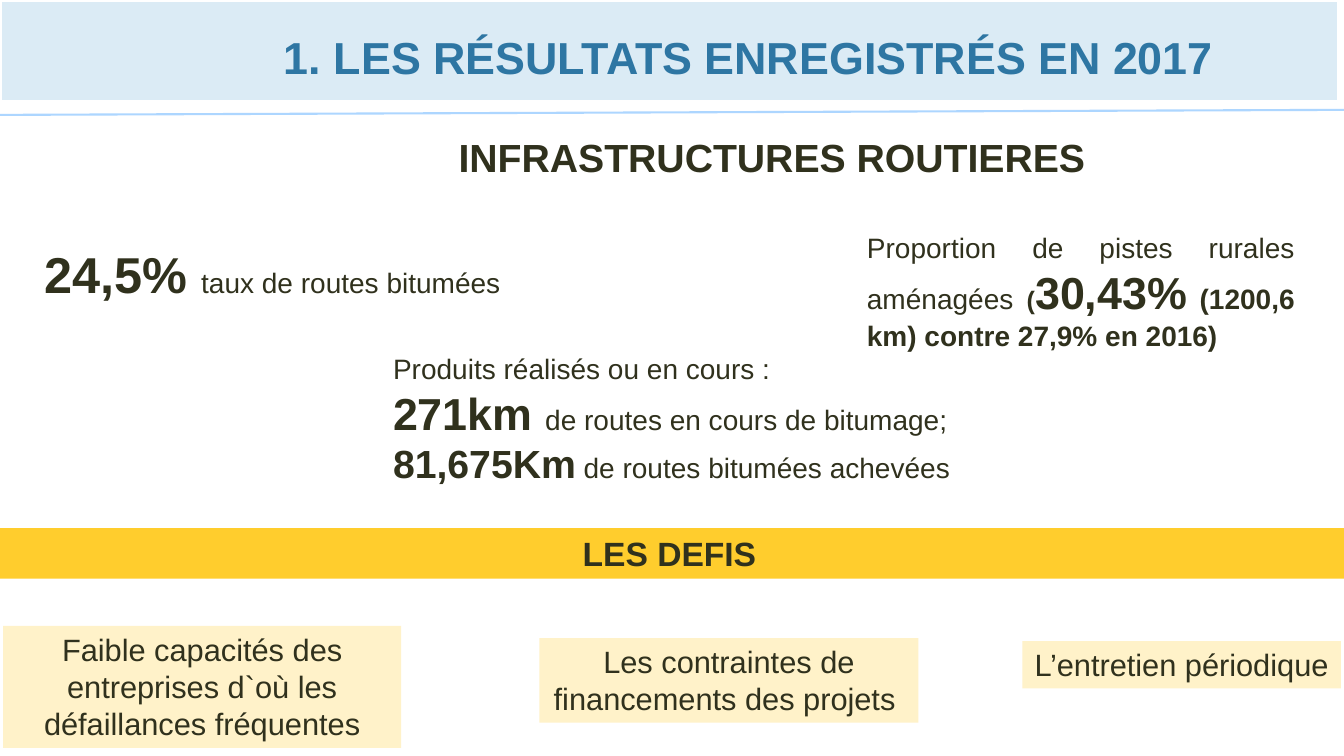
from pptx import Presentation
from pptx.dml.color import RGBColor
from pptx.enum.shapes import MSO_CONNECTOR as Link, MSO_SHAPE as Kind
from pptx.enum.text import MSO_ANCHOR as Anchor, MSO_AUTO_SIZE as Auto, PP_ALIGN as Align
from pptx.oxml.ns import qn
from pptx.util import Inches, Pt
from lxml.etree import SubElement

INK = "30311D"
BLUE = "2E76A3"
WHITE = "FFFFFF"
CREAM = "FFF2C9"
GOLD = "FFCD2D"


def tint(color, code):
    color.rgb = RGBColor.from_string(code)


def add_rect(slide, spot, fill):
    rect = slide.shapes.add_shape(Kind.RECTANGLE, *map(Inches, spot))
    rect.shadow.inherit = False
    rect.fill.solid()
    tint(rect.fill.fore_color, fill)
    rect.line.fill.background()
    return rect


def add_rule(slide, start, end, color, width):
    rule = slide.shapes.add_connector(Link.STRAIGHT, *map(Inches, start + end))
    tint(rule.line.color, color)
    rule.line.width = Pt(width)
    SubElement(rule._element.spPr, qn("a:effectLst"))


def write(box, lines, align=Align.CENTER, color=INK, wrap=True):
    frame = box.text_frame
    frame.word_wrap = wrap
    frame.auto_size = Auto.SHAPE_TO_FIT_TEXT
    frame.vertical_anchor = Anchor.TOP
    for num, line in enumerate(lines):
        para = frame.add_paragraph() if num else frame.paragraphs[0]
        para.alignment = align
        for text, size, bold in line:
            run = para.add_run()
            run.text = text
            run.font.name = "Arial"
            run.font.size = Pt(size)
            run.font.bold = bold
            tint(run.font.color, color)


def add_label(slide, spot, fill, text, size, bold=False, wrap=True):
    write(add_rect(slide, spot, fill), [[(text, size, bold)]], wrap=wrap)


def add_text(slide, spot, lines, **style):
    box = slide.shapes.add_textbox(*map(Inches, spot))
    write(box, lines, **style)
    return box


def add_title(slide):
    head = add_rect(slide, (0, 0, 13.28, 1.01), "DBEBF5")
    tint(head.line.color, WHITE)
    head.line.width = Pt(2.25)
    add_rule(slide, (0, 1.14), (13.33, 1.09), "ADD6FF", 1.5)
    title = add_text(slide, (2.54, 0.3, 9.77, 0.52),
                     [[("LES RÉSULTATS ENREGISTRÉS EN 2017", 32, True)]], color=BLUE)
    frame = title.text_frame
    frame.auto_size = Auto.NONE
    frame.vertical_anchor = Anchor.MIDDLE
    props = frame.paragraphs[0]._p.get_or_add_pPr()
    props.set("marL", str(Inches(0.5)))
    props.set("indent", str(Inches(-0.5)))
    SubElement(props, qn("a:buFont"), typeface="+mj-lt")
    SubElement(props, qn("a:buAutoNum"), type="arabicPeriod")


def add_facts(slide):
    add_label(slide, (3.94, 1.27, 7.43, 0.57), WHITE, "INFRASTRUCTURES ROUTIERES", 28, True)
    work = add_rect(slide, (3.8, 3.44, 5.86, 1.45), WHITE)
    write(work, [
        [("Produits réalisés ou en cours :", 20, False)],
        [("271km ", 32, True), ("de routes en cours de bitumage;", 20, False)],
        [("81,675Km", 28, True), (" de routes bitumées achevées", 20, False)],
    ], align=Align.JUSTIFY)
    add_text(slide, (0.34, 2.36, 4.92, 0.71), [
        [("24,5% ", 36, True), ("taux de routes bitumées", 20, False)],
    ], align=Align.JUSTIFY)
    add_text(slide, (8.5, 2.24, 4.44, 1.31), [
        [("Proportion de pistes rurales aménagées ", 20, False), ("(", 18, True),
         ("30,43%", 32, True), (" ", 18, True),
         ("(1200,6 km) contre 27,9% en 2016)", 20, True)],
    ], align=Align.JUSTIFY)


def add_needs(slide):
    add_label(slide, (-0.06, 5.24, 13.4, 0.5), GOLD, "LES DEFIS", 24, True)
    add_label(slide, (0.03, 6.21, 3.95, 1.21), CREAM,
              "Faible capacités des entreprises d`où les défaillances fréquentes", 22)
    add_label(slide, (5.35, 6.33, 3.76, 0.84), CREAM,
              "Les contraintes de financements des projets ", 22)
    add_label(slide, (10.14, 6.36, 3.16, 0.47), CREAM,
              "L’entretien périodique", 22, wrap=False)


def main():
    deck = Presentation()
    deck.slide_width = Inches(13.33)
    deck.slide_height = Inches(7.5)
    slide = deck.slides.add_slide(deck.slide_layouts[6])
    add_title(slide)
    add_facts(slide)
    add_needs(slide)
    deck.save("out.pptx")


if __name__ == "__main__":
    main()
